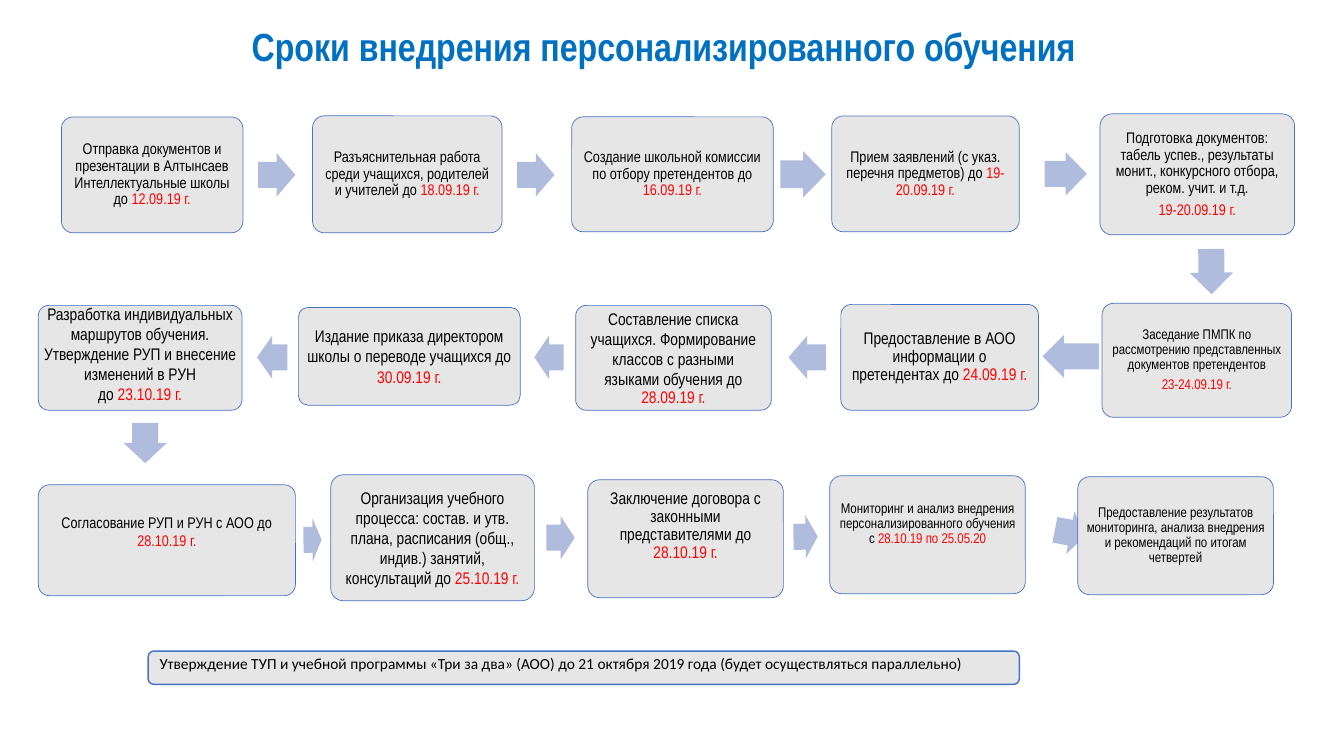
from dataclasses import dataclass

from pptx import Presentation
from pptx.dml.color import RGBColor
from pptx.enum.shapes import MSO_SHAPE
from pptx.enum.text import MSO_ANCHOR, MSO_AUTO_SIZE, PP_ALIGN
from pptx.util import Pt

PX = 9144  # 100 px to the inch


@dataclass(frozen=True)
class Theme:
    card: RGBColor = RGBColor.from_string("E7E6E6")
    border: RGBColor = RGBColor.from_string("4472C4")
    arrow: RGBColor = RGBColor.from_string("B0BCDE")
    title: RGBColor = RGBColor.from_string("0070C0")
    text: RGBColor = RGBColor.from_string("000000")
    date: RGBColor = RGBColor.from_string("FF0000")
    font: str = "Arial Narrow"
    note_font: str = "Calibri"
    title_size: int = 28
    note_size: int = 11
    large: int = 12
    medium: int = 11
    small: int = 10


T = Theme()


@dataclass(frozen=True)
class Card:
    """One step; in each paragraph the part after "|" is the date."""
    box: tuple
    paragraphs: tuple
    size: int = T.medium
    tight: bool = True
    inset: int = 5
    lift: int = 0  # extra bottom inset that raises the text


# Boxes and arrows: left, top within the row, width, height (and rotation)
ROWS = [
    ((0, 113, 1333, 180), [
        Card((61, 3, 180, 115), (
            "Отправка документов и презентации в Алтынсаев "
            "Интеллектуальные школы до |12.09.19 г.",)),
        Card((310, 2, 188, 116), (
            "Разъяснительная работа среди учащихся, родителей "
            "и учителей до |18.09.19 г.",)),
        Card((567, 3, 200, 114), (
            "Создание школьной комиссии по отбору претендентов до |16.09.19 г.",)),
        Card((825, 2, 186, 115), (
            "Прием заявлений (с указ. перечня предметов) до |19-20.09.19 г.",)),
        Card((1091, 0, 193, 120), (
            "Подготовка документов: табель успев., результаты монит., "
            "конкурсного отбора, реком. учит. и т.д.", "|19-20.09.19 г.")),
    ], [
        (256, 39, 37, 43, 0), (513, 39, 37, 43, 0), (774, 37, 45, 46, 0),
        (1036, 38, 42, 43, 0), (1179, 135, 45, 43, 89.4),
    ]),
    ((0, 301, 1333, 160), [
        Card((1093, 0, 188, 113), (
            "Заседание ПМПК по рассмотрению представленных документов "
            "претендентов", "|23-24.09.19 г."), T.small, inset=4),
        Card((834, 1, 196, 105), (
            "Предоставление в АОО информации о претендентах до |24.09.19 г.",),
            T.large),
        Card((571, 2, 194, 104), (
            "Составление списка учащихся. Формирование классов с разными "
            "языками обучения до", "|28.09.19 г."), T.large, tight=False),
        Card((296, 4, 220, 97), (
            "Издание приказа директором школы о переводе учащихся до |30.09.19 г.",),
            T.large, tight=False),
        Card((38, 2, 202, 104), (
            "Разработка индивидуальных маршрутов обучения.",
            "Утверждение РУП и внесение изменений в РУН",
            "до |23.10.19 г."), T.large, tight=False, inset=1, lift=8),
    ], [
        (1034, 31, 56, 43, 180), (782, 32, 37, 43, 180), (530, 32, 29, 43, 180),
        (255, 32, 30, 43, 180), (124, 117, 40, 43, 90),
    ]),
    ((0, 471, 1333, 125), [
        Card((38, 10, 255, 110), (
            "Согласование РУП и РУН с АОО до |28.10.19 г.",), tight=False, lift=18),
        Card((328, 0, 202, 125), (
            "Организация учебного процесса: состав. и утв. плана, расписания "
            "(общ., индив.) занятий, консультаций до |25.10.19 г.",),
            T.large, tight=False),
        Card((583, 5, 194, 117), (
            "Заключение договора с законными представителями до |28.10.19 г.",),
            T.large, lift=25),
        Card((823, 1, 194, 117), (
            "Мониторинг и анализ внедрения персонализированного обучения "
            "с |28.10.19 по 25.05.20",), T.small, inset=4, lift=21),
        Card((1069, 2, 194, 117), (
            "Предоставление результатов мониторинга, анализа внедрения "
            "и рекомендаций по итогам четвертей",), T.small, inset=4),
    ], [
        (301, 43, 18, 43, -0.6), (542, 41, 28, 43, 0), (787, 40, 24, 43, -0.9),
        (1046, 36, 31, 43, 10.9),
    ]),
]


def format_run(r, size, color, font=T.font, bold=False):
    r.font.name, r.font.size, r.font.bold = font, Pt(size), bold
    r.font.color.rgb = color


def add_block(s, kind, box, fill, border=None, width=0.5):
    sp = s.shapes.add_shape(kind, *(v * PX for v in box))
    sp.shadow.inherit = False
    sp.fill.solid()
    sp.fill.fore_color.rgb = fill
    if border is None:
        sp.line.fill.background()
    else:
        sp.line.color.rgb = border
        sp.line.width = Pt(width)
    return sp


def add_arrow(s, box, rotation):
    sp = add_block(s, MSO_SHAPE.RIGHT_ARROW, box, T.arrow)
    sp.adjustments[0], sp.adjustments[1] = 0.6, 0.5
    sp.rotation = rotation


def add_card(s, box, card):
    sp = add_block(s, MSO_SHAPE.ROUNDED_RECTANGLE, box, T.card, T.border)
    sp.adjustments[0] = 0.1
    tf = sp.text_frame
    tf.word_wrap = True
    tf.vertical_anchor = MSO_ANCHOR.MIDDLE
    tf.margin_left = tf.margin_right = tf.margin_top = card.inset * PX
    tf.margin_bottom = (card.inset + card.lift) * PX
    for i, paragraph in enumerate(card.paragraphs):
        p = tf.add_paragraph() if i else tf.paragraphs[0]
        p.alignment = PP_ALIGN.CENTER
        words, _, date = paragraph.partition("|")
        if card.tight or not words:
            p.line_spacing = 0.9
            p.space_after = Pt(0.35 * card.size)
        for text, color in ((words, T.text), (date, T.date)):
            if text:
                r = p.add_run()
                r.text = text
                format_run(r, card.size, color)


def add_row(s, box, cards, arrows):
    left, top = box[:2]
    for x, y, w, h, rotation in arrows:
        add_arrow(s, (left + x, top + y, w, h), rotation)
    for card in cards:
        x, y, w, h = card.box
        add_card(s, (left + x, top + y, w, h), card)


def add_title(s, box):
    sp = s.shapes.title
    sp.left, sp.top, sp.width, sp.height = (v * PX for v in box)
    tf = sp.text_frame
    tf.text = "Сроки внедрения персонализированного обучения"
    tf.auto_size = MSO_AUTO_SIZE.NONE
    tf.vertical_anchor = MSO_ANCHOR.MIDDLE
    p = tf.paragraphs[0]
    p.alignment = PP_ALIGN.CENTER
    format_run(p.runs[0], T.title_size, T.title, bold=True)


def add_note(s, box):
    sp = add_block(s, MSO_SHAPE.ROUNDED_RECTANGLE, box, T.card, T.border, 1)
    tf = sp.text_frame
    tf.text = ("Утверждение ТУП и учебной программы «Три за два» (АОО) "
               "до 21 октября 2019 года (будет осуществляться параллельно)")
    tf.word_wrap = True
    tf.vertical_anchor = MSO_ANCHOR.MIDDLE
    tf.margin_bottom = 13 * PX
    p = tf.paragraphs[0]
    p.alignment = PP_ALIGN.JUSTIFY
    format_run(p.runs[0], T.note_size, T.text, T.note_font)


def main():
    prs = Presentation()
    prs.slide_width, prs.slide_height = 1333 * PX, 750 * PX
    s = prs.slides.add_slide(prs.slide_layouts[5])
    add_title(s, (0, 17, 1316, 57))
    for box, cards, arrows in ROWS:
        add_row(s, box, cards, arrows)
    add_note(s, (147, 646, 864, 33))
    prs.save("out.pptx")


if __name__ == "__main__":
    main()
